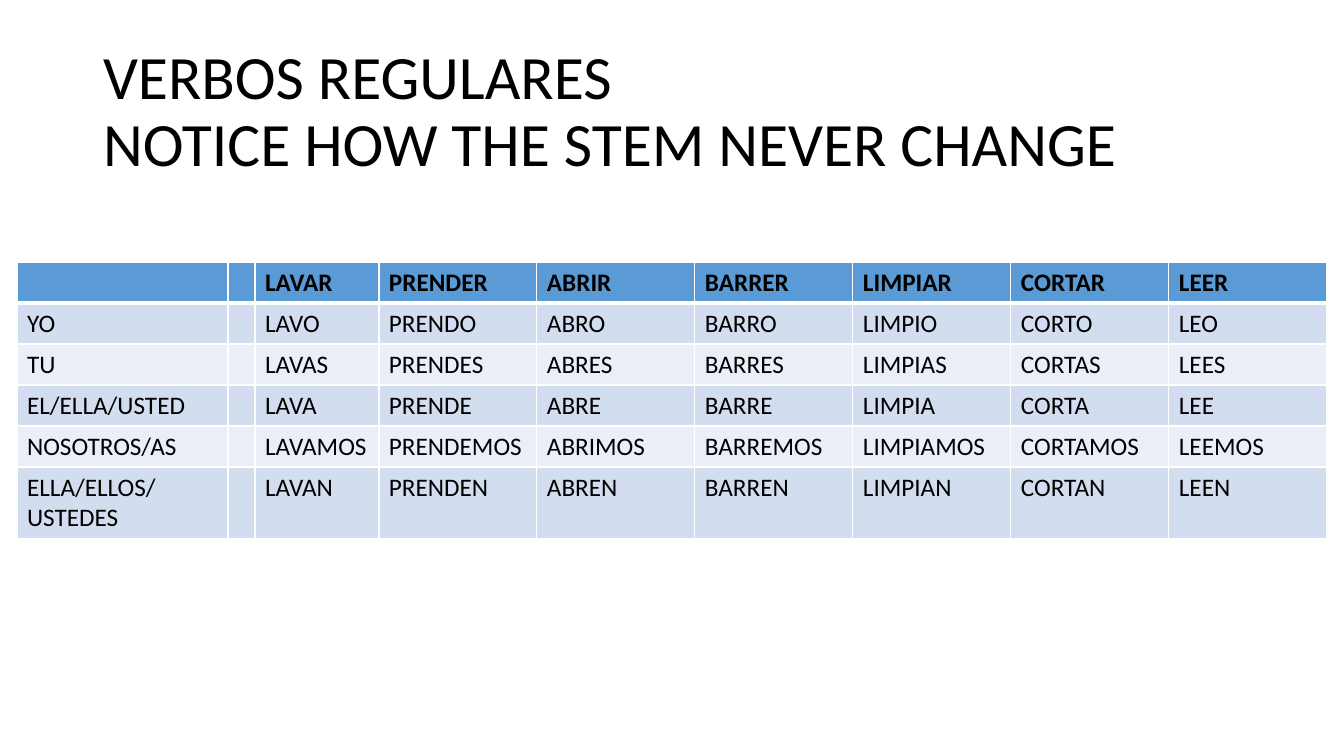
from lxml.etree import SubElement
from pptx import Presentation
from pptx.dml.color import RGBColor
from pptx.enum.text import MSO_ANCHOR, MSO_AUTO_SIZE, PP_ALIGN
from pptx.oxml.ns import qn
from pptx.util import Emu, Pt

# Content
TITLE_LINES = ["VERBOS REGULARES ", "NOTICE HOW THE STEM NEVER CHANGE"]
VERB_ROWS = [
    ["", "", "LAVAR", "PRENDER", "ABRIR", "BARRER", "LIMPIAR", "CORTAR", "LEER"],
    ["YO", "", "LAVO", "PRENDO", "ABRO", "BARRO", "LIMPIO", "CORTO", "LEO"],
    ["TU", "", "LAVAS", "PRENDES", "ABRES", "BARRES", "LIMPIAS", "CORTAS", "LEES"],
    ["EL/ELLA/USTED", "", "LAVA", "PRENDE", "ABRE", "BARRE", "LIMPIA", "CORTA", "LEE"],
    ["NOSOTROS/AS", "", "LAVAMOS", "PRENDEMOS", "ABRIMOS", "BARREMOS", "LIMPIAMOS",
     "CORTAMOS", "LEEMOS"],
    ["ELLA/ELLOS/ USTEDES", "", "LAVAN", "PRENDEN", "ABREN", "BARREN", "LIMPIAN",
     "CORTAN", "LEEN"],
]

# Layout in px, and style
PAGE_SIZE = (1344, 756)
TITLE_BOX = (93, 40, 1159, 146)
TABLE_CORNER = (17, 262)
COLUMN_WIDTHS = [211, 27, 124] + [158] * 6
ROW_HEIGHTS = [41] * 5 + [71]
FONT = "Calibri"
BLACK, WHITE = "000000", "FFFFFF"
HEADER_FILL, BAND_FILLS = "5B9BD5", ("EAEFF7", "D2DEEF")


def px(length):
    return Emu(round(length * 914400 / 100.8))


def color(value):
    return RGBColor.from_string(value)


def add_run(para, text, size, bold=False):
    span = para.add_run()
    span.text = text
    span.font.name = FONT
    span.font.size = Pt(size)
    span.font.bold = bold
    span.font.color.rgb = color(BLACK)


def add_border(cell, side, points):
    properties = cell._tc.get_or_add_tcPr()
    line = SubElement(properties, qn(f"a:ln{side}"), w=str(Pt(points)))
    fill = SubElement(line, qn("a:solidFill"))
    SubElement(fill, qn("a:srgbClr"), val=WHITE)


deck = Presentation()
deck.slide_width, deck.slide_height = map(px, PAGE_SIZE)
page = deck.slides.add_slide(deck.slide_layouts[5])

# Title
title = page.shapes.title
title.left, title.top, title.width, title.height = map(px, TITLE_BOX)
frame = title.text_frame
frame.word_wrap = True
frame.auto_size = MSO_AUTO_SIZE.NONE
frame.vertical_anchor = MSO_ANCHOR.MIDDLE
para = frame.paragraphs[0]
para.alignment = PP_ALIGN.LEFT
para.line_spacing = 0.9
for index, text in enumerate(TITLE_LINES):
    if index:
        para.add_line_break()
    add_run(para, text, 44)

# Conjugation table
table = page.shapes.add_table(
    len(ROW_HEIGHTS), len(COLUMN_WIDTHS), *map(px, TABLE_CORNER),
    px(sum(COLUMN_WIDTHS)), px(sum(ROW_HEIGHTS))).table
table.horz_banding = False
for column, width in zip(table.columns, COLUMN_WIDTHS):
    column.width = px(width)
for row, height in zip(table.rows, ROW_HEIGHTS):
    row.height = px(height)

for row_index, words in enumerate(VERB_ROWS):
    is_header = row_index == 0
    row_fill = HEADER_FILL if is_header else BAND_FILLS[row_index % 2]
    # The rule under the header is thicker than the others
    borders = {"L": 1, "R": 1, "T": 3 if row_index == 1 else 1, "B": 3 if is_header else 1}
    for column_index, word in enumerate(words):
        cell = table.cell(row_index, column_index)
        for side, points in borders.items():
            add_border(cell, side, points)
        cell.fill.solid()
        cell.fill.fore_color.rgb = color(row_fill)
        if word:
            add_run(cell.text_frame.paragraphs[0], word, 18, is_header)

deck.save("out.pptx")
